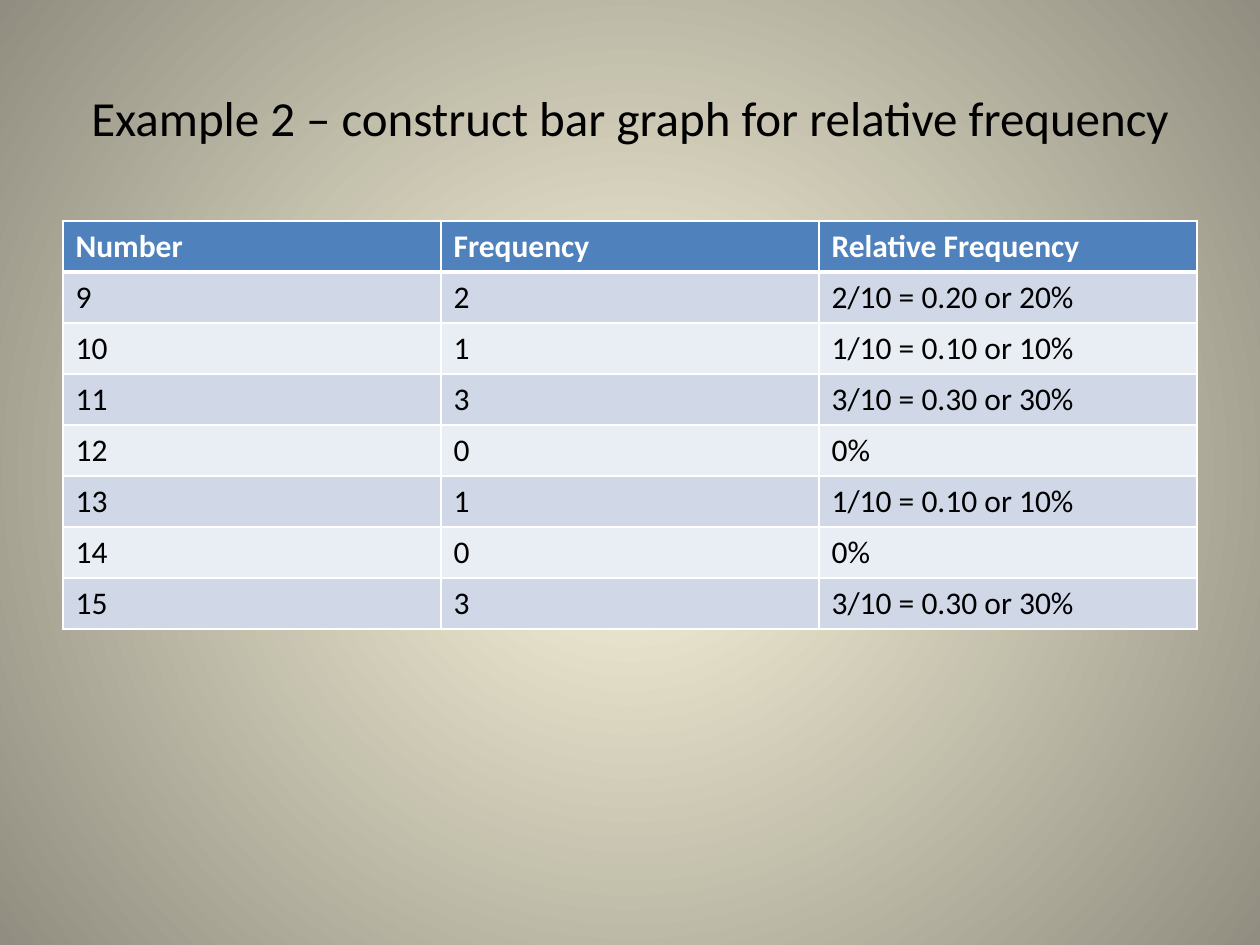
from lxml import etree
from pptx import Presentation
from pptx.dml.color import RGBColor
from pptx.enum.text import MSO_ANCHOR, PP_ALIGN
from pptx.oxml.ns import qn
from pptx.util import Emu, Pt

EMU_PER_PX = 914400 / 126
MIDDLE = MSO_ANCHOR.MIDDLE
CENTER = PP_ALIGN.CENTER
FONT = "Calibri"
BLACK, WHITE = "000000", "FFFFFF"
HEADER_FILL = "4F81BD"
BAND_FILLS = ("D0D8E8", "E9EDF4")
GLOW = ("FCF7DD", "918E81")

TITLE = "Example 2 – construct bar graph for relative frequency"
ROWS = [
    ("Number", "Frequency", "Relative Frequency"),
    ("9", "2", "2/10 = 0.20 or 20%"),
    ("10", "1", "1/10 = 0.10 or 10%"),
    ("11", "3", "3/10 = 0.30 or 30%"),
    ("12", "0", "0%"),
    ("13", "1", "1/10 = 0.10 or 10%"),
    ("14", "0", "0%"),
    ("15", "3", "3/10 = 0.30 or 30%"),
]


def px(length):
    return Emu(round(length * EMU_PER_PX))


def color(hex_text):
    return RGBColor.from_string(hex_text)


def write(frame, text, size, hex_text, bold=False):
    para = frame.paragraphs[0]
    span = para.add_run()
    span.text = text
    for name, value in {"name": FONT, "size": Pt(size), "bold": bold}.items():
        setattr(span.font, name, value)
    span.font.color.rgb = color(hex_text)
    return para


def paint_background(page):
    fill = page.background.fill
    fill.gradient()
    for stop, hex_text in zip(fill.gradient_stops, GLOW):
        stop.color.rgb = color(hex_text)
    for stop, position in zip(fill.gradient_stops, (0, 1)):
        stop.position = position
    # Swap the linear direction for a circle around the centre
    gradient = page.element.find(".//" + qn("a:gradFill"))
    gradient.remove(gradient.find(qn("a:lin")))
    circle = etree.SubElement(gradient, qn("a:path"), {"path": "circle"})
    sides = dict.fromkeys("ltrb", "50000")
    etree.SubElement(circle, qn("a:fillToRect"), sides)


def add_title(page, left, top, width, height):
    box = page.shapes.add_textbox(px(left), px(top), px(width), px(height))
    frame = box.text_frame
    frame.word_wrap = True
    frame.vertical_anchor = MIDDLE
    write(frame, TITLE, 28, BLACK).alignment = CENTER


def set_borders(cell, widths):
    properties = cell._tc.get_or_add_tcPr()
    for side, points in widths.items():
        line = etree.SubElement(properties, qn("a:ln" + side), {"w": str(Pt(points))})
        solid = etree.SubElement(line, qn("a:solidFill"))
        etree.SubElement(solid, qn("a:srgbClr"), {"val": WHITE})


def add_frequency_table(page, left, top, width, height):
    shape = page.shapes.add_table(
        len(ROWS), len(ROWS[0]), px(left), px(top), px(width), px(height))
    table = shape.table
    for column in table.columns:
        column.width = px(width // len(ROWS[0]))
    for row in table.rows:
        row.height = px(height // len(ROWS))
    for r, values in enumerate(ROWS):
        header = r == 0
        fill = HEADER_FILL if header else BAND_FILLS[(r - 1) % 2]
        # The rule under the header is heavier than the others
        widths = {"L": 1, "R": 1, "T": 3 if r == 1 else 1, "B": 3 if header else 1}
        for c, value in enumerate(values):
            cell = table.cell(r, c)
            set_borders(cell, widths)
            cell.fill.solid()
            cell.fill.fore_color.rgb = color(fill)
            write(cell.text_frame, value, 18, WHITE if header else BLACK, header)


def main():
    deck = Presentation()
    deck.slide_width, deck.slide_height = px(1260), px(945)
    page = deck.slides.add_slide(deck.slide_layouts[6])
    paint_background(page)
    add_title(page, 63, 38, 1134, 158)
    add_frequency_table(page, 63, 221, 1134, 408)
    deck.save("out.pptx")


if __name__ == "__main__":
    main()
